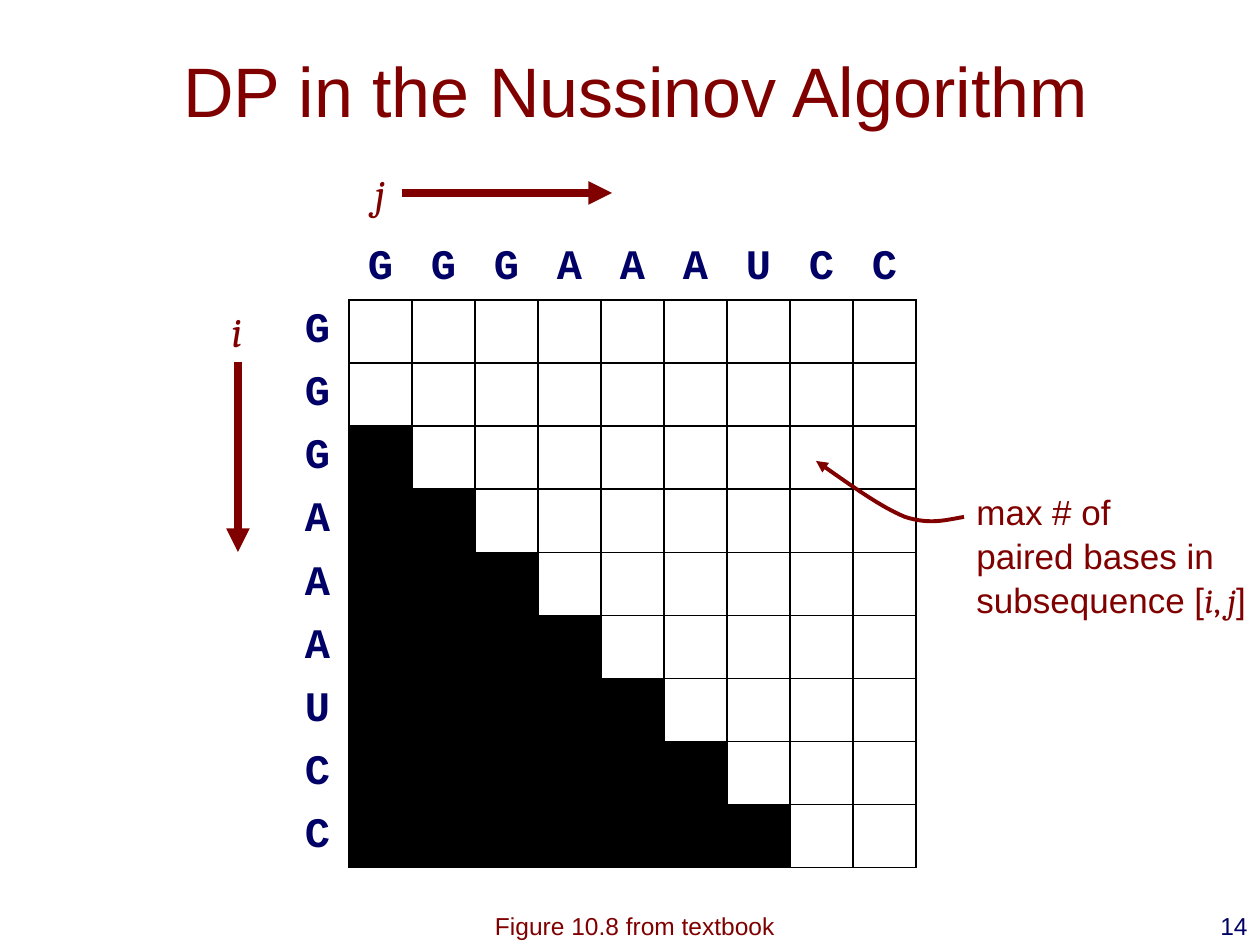
from lxml.etree import SubElement
from pptx import Presentation
from pptx.dml.color import RGBColor
from pptx.enum.shapes import MSO_CONNECTOR
from pptx.enum.text import MSO_ANCHOR, PP_ALIGN
from pptx.oxml import parse_xml
from pptx.oxml.ns import nsdecls, qn
from pptx.util import Pt

PX = 914400 / 126
RED = RGBColor(0x80, 0x00, 0x00)
NAVY = RGBColor(0x00, 0x00, 0x66)
BLACK = RGBColor(0x00, 0x00, 0x00)
BASES = "GGGAAAUCC"
CELL = 63


def px(*sizes):
    return [round(size * PX) for size in sizes]


def style(run, size, color, font="Arial", bold=False, italic=False):
    run.font.size = Pt(size)
    run.font.name = font
    run.font.color.rgb = color
    run.font.bold = bold
    run.font.italic = italic


def add_title(slide, text, box):
    title = slide.shapes.title
    title.left, title.top, title.width, title.height = px(*box)
    frame = title.text_frame
    frame.text = text
    frame.vertical_anchor = MSO_ANCHOR.MIDDLE
    frame.paragraphs[0].alignment = PP_ALIGN.CENTER
    style(frame.paragraphs[0].runs[0], 40, RED)


def add_label(slide, text, box, size, color=RED, align=PP_ALIGN.CENTER, **font):
    frame = slide.shapes.add_textbox(*px(*box)).text_frame
    frame.word_wrap = True
    frame.text = text
    frame.paragraphs[0].alignment = align
    style(frame.paragraphs[0].runs[0], size, color, **font)


def add_note(slide, lines, box):
    """Each line is a list of (text, font, italic) parts."""
    frame = slide.shapes.add_textbox(*px(*box)).text_frame
    frame.word_wrap = False
    for i, parts in enumerate(lines):
        para = frame.add_paragraph() if i else frame.paragraphs[0]
        para.line_spacing = 1.05
        for text, font, italic in parts:
            run = para.add_run()
            run.text = text
            style(run, 20, RED, font=font, italic=italic)


def set_edges(cell, shown):
    """Draw the edges named in shown (of L, R, T, B) and hide the rest."""
    props = cell._tc.get_or_add_tcPr()
    for i, side in enumerate("LRTB"):
        paint = ('<a:solidFill><a:srgbClr val="000000"/></a:solidFill>'
                 if side in shown else "<a:noFill/>")
        props.insert(i, parse_xml(
            f'<a:ln{side} {nsdecls("a")} w="12700">{paint}</a:ln{side}>'))


def add_matrix(slide, left, top):
    count = len(BASES) + 1
    side = count * CELL
    table = slide.shapes.add_table(
        count, count, *px(left, top, side, side)).table
    table.first_row = table.horz_banding = False
    for line in [*table.rows]:
        line.height = px(CELL)[0]
    for line in [*table.columns]:
        line.width = px(CELL)[0]
    for row in range(count):
        for col in range(count):
            cell = table.cell(row, col)
            if row and col:
                edges = "LRTB"
            else:
                edges = "R" if row else "B" if col else ""
                if edges:
                    fill_base(cell, BASES[row + col - 1])
            if 0 < col < row - 1:
                cell.fill.solid()
                cell.fill.fore_color.rgb = BLACK
            else:
                cell.fill.background()
            set_edges(cell, edges)


def fill_base(cell, base):
    cell.text_frame.text = base
    cell.vertical_anchor = MSO_ANCHOR.MIDDLE
    para = cell.text_frame.paragraphs[0]
    para.alignment = PP_ALIGN.CENTER
    style(para.runs[0], 24, NAVY, font="Courier New", bold=True)


def set_line(shape, width):
    shape.line.color.rgb = RED
    shape.line.width = Pt(width)
    SubElement(shape.line._get_or_add_ln(), qn("a:tailEnd"), type="triangle")


def add_arrow(slide, start, end):
    arrow = slide.shapes.add_connector(
        MSO_CONNECTOR.STRAIGHT, *px(*start, *end))
    set_line(arrow, 4.5)
    SubElement(arrow._element.spPr, qn("a:effectLst"))


def add_curve(slide, start, *points):
    """Draw a Bezier curve; every three points make one segment."""
    form = slide.shapes.build_freeform(*start, scale=PX)
    form.add_line_segments(points, close=False)
    curve = form.convert_to_shape()
    curve.shadow.inherit = False
    curve.fill.background()
    set_line(curve, 2.25)
    steps = list(curve._element.iter(qn("a:lnTo")))
    for i in range(0, len(steps), 3):
        bend = SubElement(steps[i].getparent(), qn("a:cubicBezTo"))
        for step in steps[i:i + 3]:
            bend.append(step[0])
            step.getparent().remove(step)


def main():
    deck = Presentation()
    deck.slide_width, deck.slide_height = px(1260, 945)
    slide = deck.slides.add_slide(deck.slide_layouts[5])

    add_title(slide, "DP in the Nussinov Algorithm", (42, 10, 1187, 158))
    add_label(slide, "14", (998, 905, 262, 63), 14, NAVY, PP_ALIGN.RIGHT)
    add_matrix(slide, 286, 237)

    for name, left, top in (("j", 358, 161), ("i", 215, 299)):
        add_label(slide, name, (left, top, 44, 63), 24,
                  font="Cambria", italic=True)
    add_arrow(slide, (402, 193), (612, 193))
    add_arrow(slide, (238, 362), (238, 552))

    add_label(slide, "Figure 10.8 from textbook", (408, 905, 454, 43), 14)
    add_note(slide, [
        [("max # of", "Arial", False)],
        [("paired bases in", "Arial", False)],
        [("subsequence [", "Arial", False), ("i", "Cambria", True),
         (", ", "Cambria", False), ("j", "Cambria", True),
         ("]", "Arial", False)],
    ], (964, 482, 300, 139))
    add_curve(slide, (964, 517), (946, 520), (930, 525), (905, 517),
              (881, 507), (849, 484), (816, 461))

    deck.save("out.pptx")


if __name__ == "__main__":
    main()
